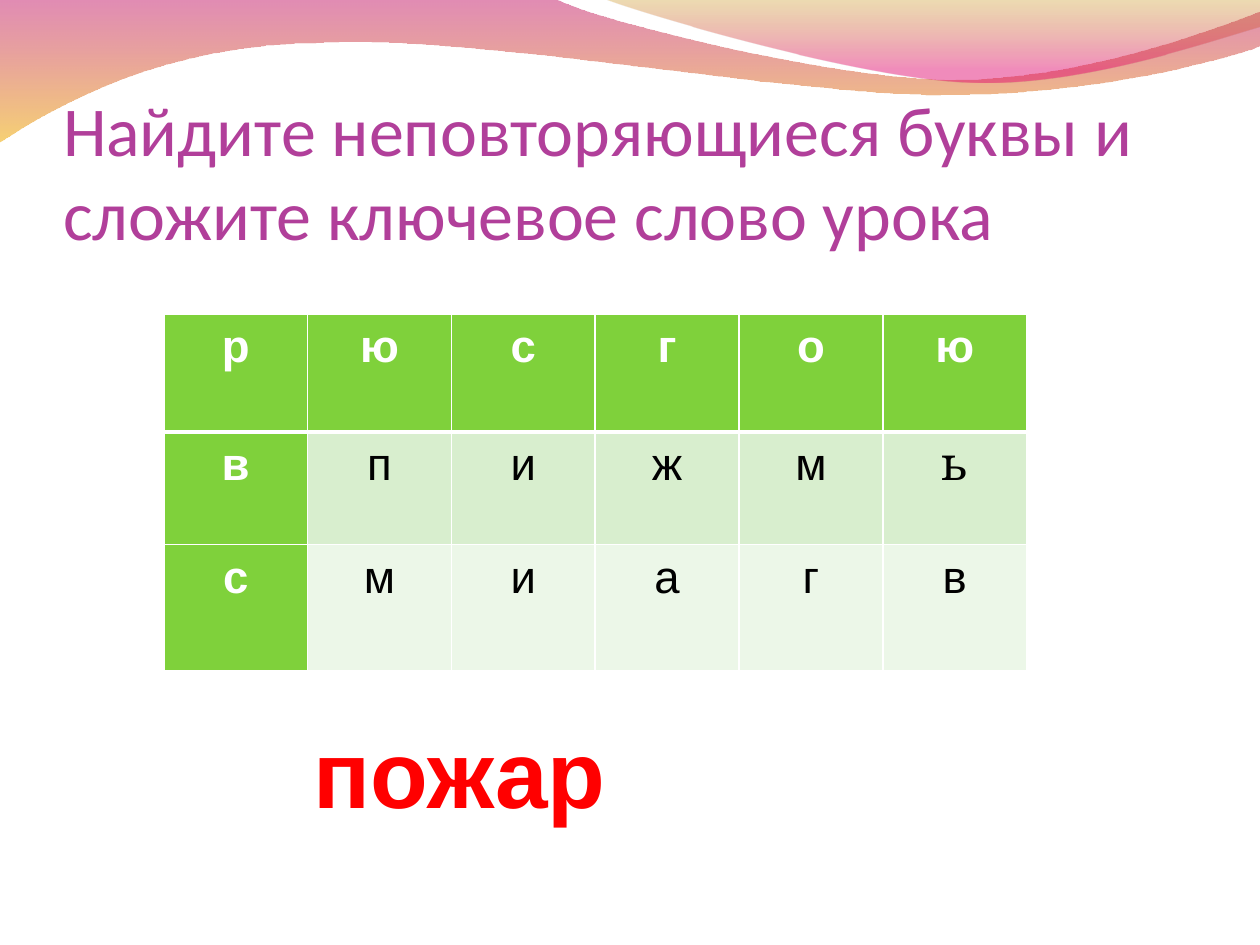
from lxml import etree
from pptx import Presentation
from pptx import util as u
from pptx.dml.color import RGBColor
from pptx.enum import text
from pptx.oxml import ns

COLORS = {
    "white": "FFFFFF", "black": "000000", "title": "B13F9A", "answer": "FF0000",
    "header": "7FD13B", "band_dark": "D8EECE", "band_light": "ECF7E8",
    "magenta": "BD0059", "orange": "F0AB00", "gold": "C38B00", "pink": "E1006B",
}

# Waves, in grid cells: a start point, then lines (1 point) and curves (3 points)
BACK_WAVE = [
    [(0, -0.1)], [(44, -0.1)],
    [(47.6, 1.7), (66.4, 6.3), (75.8, 6.3)],
    [(85.3, 6.3), (95.8, 2.6), (100, 0.9)],
    [(100.1, 3.6)],
    [(98.3, 4.4), (87, 7.6), (74.6, 7.5)],
    [(62.2, 7.5), (38.2, 2.8), (25.7, 3.4)],
    [(12.9, 3.5), (4.6, 8.3), (-0.1, 11.3)],
    [(0, -0.1)],
]
FRONT_WAVE = [
    [(47.9, -0.1)],
    [(50.9, 1.1), (68.2, 6.2), (76.9, 6.5)],
    [(85.6, 6.9), (96.1, 3.2), (100, 2.1)],
    [(100, 0)], [(47.9, -0.1)],
]
LETTERS = ["рюсгою", "впижмь", "смиагв"]


def color(name):
    return RGBColor.from_string(COLORS[name])


def write(frame, words, size=18, font="Arial", ink="black", bold=False,
          align=text.PP_ALIGN.LEFT, spacing=None):
    para = frame.paragraphs[0]
    para.alignment = align
    para.line_spacing = spacing
    span = para.add_run()
    span.text = words
    span.font.size = u.Pt(size)
    span.font.name = font
    span.font.bold = bold
    span.font.color.rgb = color(ink)


def bend(shape, parts):
    """Join the three segments of every curved part into one Bezier segment."""
    segments = iter(list(shape.element.iter(ns.qn("a:lnTo"))))
    for part in parts:
        first, *others = [next(segments) for point in part]
        if others:
            first.tag = ns.qn("a:cubicBezTo")
            for segment in others:
                first.append(segment[0])
                segment.getparent().remove(segment)


class Deck:
    COLUMNS, ROWS = 100, 75

    def __init__(self):
        self.deck = Presentation()
        self.deck.slide_width, self.deck.slide_height = u.Inches(10), u.Inches(7.5)
        self.page = self.deck.slides.add_slide(self.deck.slide_layouts[5])

    def x(self, columns):
        return round(self.deck.slide_width * columns / self.COLUMNS)

    def y(self, rows):
        return round(self.deck.slide_height * rows / self.ROWS)

    def area(self, left, top, width, height):
        return self.x(left), self.y(top), self.x(width), self.y(height)

    def wave(self, outline, stops):
        points = [(self.x(across), self.y(down)) for part in outline for across, down in part]
        builder = self.page.shapes.build_freeform(*points[0])
        builder.add_line_segments(points[1:], close=True)
        shape = builder.convert_to_shape()
        bend(shape, outline[1:])
        shape.shadow.inherit = False
        shape.line.fill.background()
        shape.fill.gradient()
        shape.fill.gradient_angle = 270
        for stop, (position, name, opacity) in zip(shape.fill.gradient_stops, stops):
            stop.position = position
            stop.color.rgb = color(name)
        tints = shape.element.spPr.iterfind(".//" + ns.qn("a:srgbClr"))
        for tint, (position, name, opacity) in zip(tints, stops):
            etree.SubElement(tint, ns.qn("a:alpha"), val=str(opacity * 1000))
        self.page.shapes.title.element.addprevious(shape.element)

    def title(self, words, area, **style):
        box = self.page.shapes.title
        box.left, box.top, box.width, box.height = self.area(*area)
        frame = box.text_frame
        frame.word_wrap = True
        frame.auto_size = text.MSO_AUTO_SIZE.NONE
        frame.vertical_anchor = text.MSO_ANCHOR.BOTTOM
        frame.margin_left = frame.margin_right = frame.margin_bottom = 0
        frame.margin_top = u.Inches(0.05)
        write(frame, words, **style)

    def border(self, cell, side, width):
        line = etree.SubElement(cell._tc.get_or_add_tcPr(), ns.qn("a:ln" + side),
                                w=str(u.Pt(width)))
        fill = etree.SubElement(line, ns.qn("a:solidFill"))
        etree.SubElement(fill, ns.qn("a:srgbClr"), val=COLORS["white"])

    def table(self, rows, area, heights):
        grid = self.page.shapes.add_table(len(rows), len(rows[0]), *self.area(*area)).table
        grid.first_col = True
        for r, letters in enumerate(rows):
            grid.rows[r].height = self.y(heights[r])
            for c, letter in enumerate(letters):
                cell = grid.cell(r, c)
                heading = r == 0 or c == 0
                # Borders, with a thick rule under the first row
                for side in "LRTB":
                    thick = (r, side) in ((0, "B"), (1, "T"))
                    self.border(cell, side, 3 if thick else 1)
                cell.fill.solid()
                band = "band_dark" if r % 2 else "band_light"
                cell.fill.fore_color.rgb = color("header" if heading else band)
                cell.margin_left = cell.margin_right = u.Inches(0.07)
                cell.margin_top = cell.margin_bottom = 0
                write(cell.text_frame, letter, size=26, bold=heading,
                      font="Cambria" if letter == "ь" else "Arial",
                      ink="white" if heading else "black",
                      align=text.PP_ALIGN.CENTER, spacing=1.15)

    def label(self, words, area, **style):
        frame = self.page.shapes.add_textbox(*self.area(*area)).text_frame
        frame.word_wrap = True
        frame.auto_size = text.MSO_AUTO_SIZE.SHAPE_TO_FIT_TEXT
        write(frame, words, **style)

    def save(self):
        self.deck.save("out.pptx")


def main():
    lesson = Deck()
    # Decorative waves
    lesson.wave(BACK_WAVE, [(0, "magenta", 45), (1, "orange", 55)])
    lesson.wave(FRONT_WAVE, [(0, "gold", 30), (0.8, "pink", 45)])
    # Task
    lesson.title("Найдите неповторяющиеся буквы и сложите ключевое слово урока",
                 (5, 7.7, 90, 12.5), size=40, font="Calibri", ink="title")
    # Letter grid
    lesson.table(LETTERS, (13, 24.9, 68.5, 28.3), heights=(9.4, 8.9, 10))
    # Answer
    lesson.label("пожар", (23.9, 56.2, 37.1, 10.1), size=54, ink="answer", bold=True)
    lesson.save()


if __name__ == "__main__":
    main()
